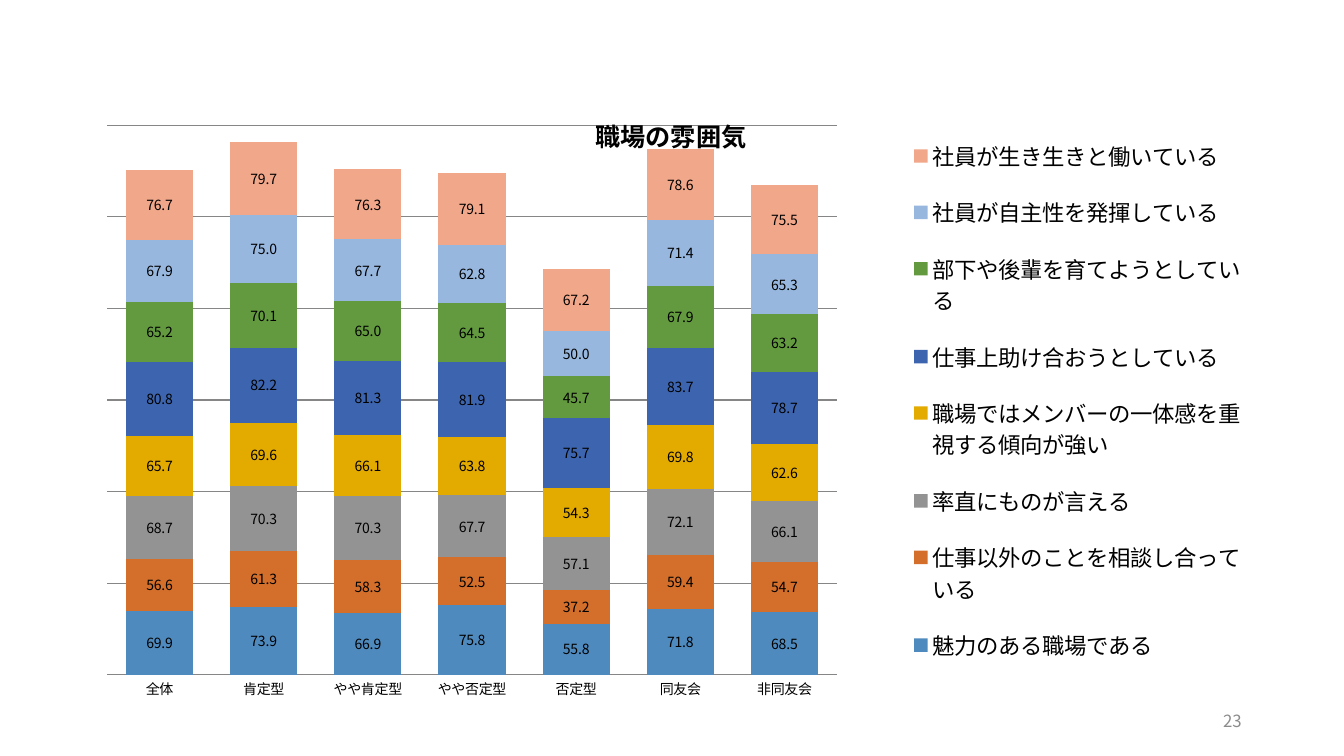
from dataclasses import dataclass

from lxml.etree import SubElement
from pptx import Presentation
from pptx.chart.chart import Chart
from pptx.chart.data import CategoryChartData
from pptx.dml.color import RGBColor
from pptx.enum.chart import XL_CHART_TYPE, XL_LEGEND_POSITION, XL_TICK_LABEL_POSITION, XL_TICK_MARK
from pptx.enum.text import MSO_ANCHOR, PP_ALIGN
from pptx.oxml.ns import qn
from pptx.slide import Slide
from pptx.text.text import Font
from pptx.util import Pt

FONT = "Noto Sans CJK JP"
COLOURS = {
    "text": "000000", "page_number": "8C8C8C", "grid": "868686",
    "blue": "4F8ABE", "orange": "D36F2B", "grey": "939393", "gold": "E3AA00",
    "navy": "3D65AF", "green": "639A3F", "pale_blue": "98B7DF", "salmon": "F1A78A",
}
CATEGORIES = ["全体", "肯定型", "やや肯定型", "やや否定型", "否定型", "同友会", "非同友会"]


@dataclass
class Answer:
    name: str
    colour: str
    values: list[float]


ANSWERS = [
    Answer("魅力のある職場である", "blue", [69.9, 73.9, 66.9, 75.8, 55.8, 71.8, 68.5]),
    Answer("仕事以外のことを相談し合っている", "orange", [56.6, 61.3, 58.3, 52.5, 37.2, 59.4, 54.7]),
    Answer("率直にものが言える", "grey", [68.7, 70.3, 70.3, 67.7, 57.1, 72.1, 66.1]),
    Answer("職場ではメンバーの一体感を重視する傾向が強い", "gold",
           [65.7, 69.6, 66.1, 63.8, 54.3, 69.8, 62.6]),
    Answer("仕事上助け合おうとしている", "navy", [80.8, 82.2, 81.3, 81.9, 75.7, 83.7, 78.7]),
    Answer("部下や後輩を育てようとしている", "green", [65.2, 70.1, 65.0, 64.5, 45.7, 67.9, 63.2]),
    Answer("社員が自主性を発揮している", "pale_blue", [67.9, 75.0, 67.7, 62.8, 50.0, 71.4, 65.3]),
    Answer("社員が生き生きと働いている", "salmon", [76.7, 79.7, 76.3, 79.1, 67.2, 78.6, 75.5]),
]


def colour(name: str) -> RGBColor:
    return RGBColor.from_string(COLOURS[name])


def format_font(font: Font, size: float, colour_name: str = "text", bold: bool = False) -> None:
    font.name = FONT
    font.size = Pt(size)
    font.bold = bold
    font.color.rgb = colour(colour_name)


def add_text(page: Slide, text: str, *, left: float, top: float, width: float, height: float,
             size: float, colour_name: str, align: PP_ALIGN) -> None:
    box = page.shapes.add_textbox(Pt(left), Pt(top), Pt(width), Pt(height))
    frame = box.text_frame
    frame.word_wrap = True
    frame.vertical_anchor = MSO_ANCHOR.MIDDLE
    para = frame.paragraphs[0]
    para.alignment = align
    span = para.add_run()
    span.text = text
    format_font(span.font, size, colour_name)


def place_part(chart: Chart, part_name: str, **fractions: float) -> None:
    """Fix a chart part at x, y and optionally w, h, as fractions of the chart."""
    part = chart._chartSpace.find(f".//{qn(part_name)}")
    for old_layout in part.findall(qn("c:layout")):
        part.remove(old_layout)
    layout = SubElement(part, qn("c:layout"))
    overlay = part.find(qn("c:overlay"))
    if overlay is None:
        part.insert(0, layout)
    else:
        overlay.addprevious(layout)
    manual = SubElement(layout, qn("c:manualLayout"))
    if part_name == "c:plotArea":
        SubElement(manual, qn("c:layoutTarget")).set("val", "inner")
    for side in ("x", "y"):
        SubElement(manual, qn(f"c:{side}Mode")).set("val", "edge")
    for side, fraction in fractions.items():
        SubElement(manual, qn(f"c:{side}")).set("val", str(fraction))


def add_answer_chart(page: Slide) -> Chart:
    data = CategoryChartData(number_format="0.0")
    data.categories = CATEGORIES
    for answer in ANSWERS:
        data.add_series(answer.name, answer.values)
    chart = page.shapes.add_chart(XL_CHART_TYPE.COLUMN_STACKED, Pt(66), Pt(60),
                                  Pt(828), Pt(448), data).chart
    format_font(chart.font, 10)
    plot = chart.plots[0]
    plot.gap_width = 55
    plot.overlap = 100
    plot.vary_by_categories = False
    for series, answer in zip(plot.series, ANSWERS):
        series.format.fill.solid()
        series.format.fill.fore_color.rgb = colour(answer.colour)
        labels = series.data_labels
        labels.show_value = True
        labels.number_format = "0.0"
        labels.number_format_is_linked = False
        format_font(labels.font, 10)
    return chart


def format_axes(chart: Chart) -> None:
    value_axis = chart.value_axis
    value_axis.minimum_scale = 0
    value_axis.maximum_scale = 600
    value_axis.major_unit = 100
    value_axis.major_tick_mark = XL_TICK_MARK.NONE
    value_axis.tick_label_position = XL_TICK_LABEL_POSITION.NONE
    value_axis.format.line.fill.background()
    category_axis = chart.category_axis
    category_axis.major_tick_mark = XL_TICK_MARK.NONE
    format_font(category_axis.tick_labels.font, 10)
    for line in (value_axis.major_gridlines.format.line, category_axis.format.line):
        line.color.rgb = colour("grid")
        line.width = Pt(0.75)


def format_title_and_legend(chart: Chart) -> None:
    chart.has_title = True
    frame = chart.chart_title.text_frame
    frame.text = "職場の雰囲気"
    format_font(frame.paragraphs[0].runs[0].font, 18, bold=True)
    chart.has_legend = True
    chart.legend.position = XL_LEGEND_POSITION.RIGHT
    chart.legend.include_in_layout = False
    format_font(chart.legend.font, 16)
    place_part(chart, "c:title", x=0.43, y=0.04)
    place_part(chart, "c:plotArea", x=0.013, y=0.066, w=0.629, h=0.876)
    place_part(chart, "c:legend", x=0.7, y=0.05, w=0.3, h=0.91)


def main() -> None:
    deck = Presentation()
    deck.slide_width, deck.slide_height = Pt(960), Pt(540)
    page = deck.slides.add_slide(deck.slide_layouts[6])
    add_text(page, "23", left=678, top=500.5, width=216, height=28.75,
             size=12, colour_name="page_number", align=PP_ALIGN.RIGHT)
    chart = add_answer_chart(page)
    format_axes(chart)
    format_title_and_legend(chart)
    deck.save("out.pptx")


if __name__ == "__main__":
    main()
